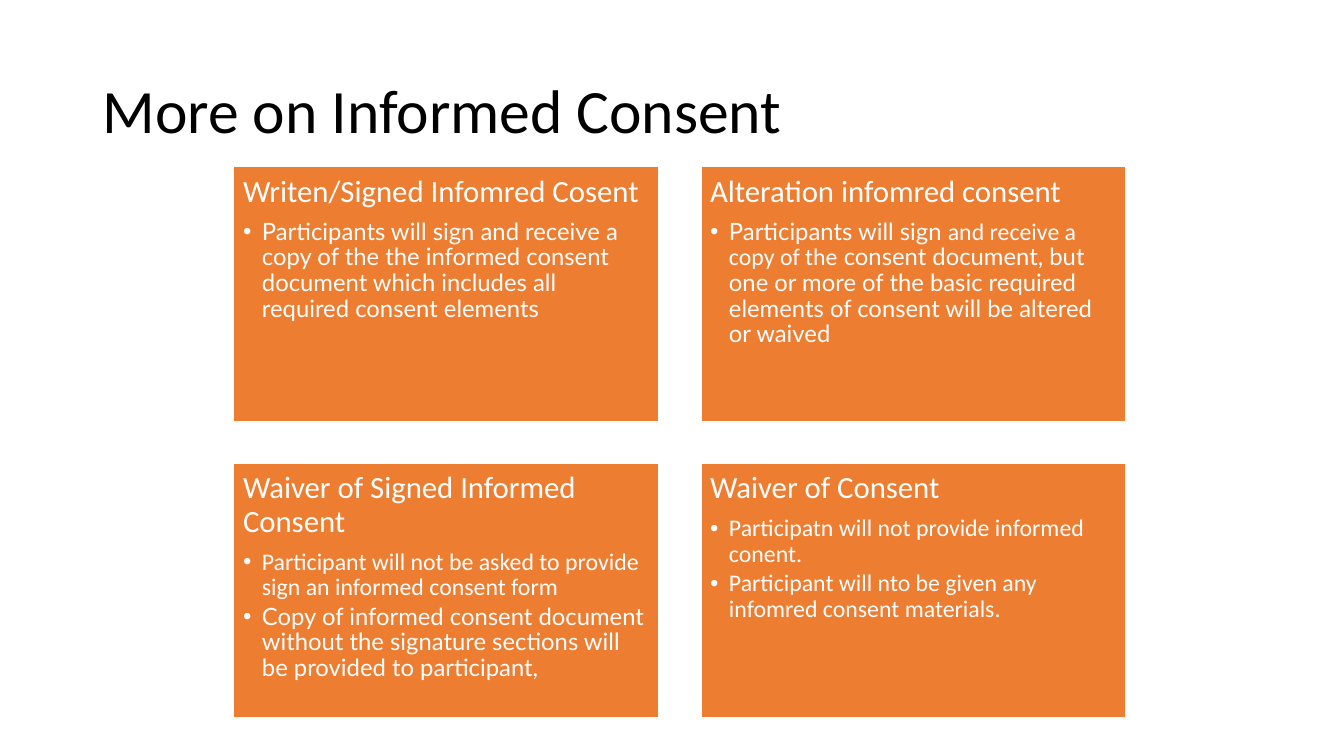
from dataclasses import dataclass

from lxml import etree
from pptx import Presentation
from pptx.dml.color import RGBColor
from pptx.enum.text import MSO_ANCHOR, MSO_AUTO_SIZE, PP_ALIGN
from pptx.oxml.ns import qn
from pptx.util import Pt

LEFT = PP_ALIGN.LEFT
TOP, MIDDLE = MSO_ANCHOR.TOP, MSO_ANCHOR.MIDDLE
NO_FIT = MSO_AUTO_SIZE.NONE
COMPARISON_LAYOUT = 4  # a title and four body placeholders


@dataclass(frozen=True)
class Theme:
    ink: RGBColor = RGBColor(0x00, 0x00, 0x00)
    paper: RGBColor = RGBColor(0xFF, 0xFF, 0xFF)
    card: RGBColor = RGBColor(0xED, 0x7D, 0x31)
    main_font: str = "Calibri"
    alt_font: str = "Lato"
    title_size: float = 44
    heading_size: float = 22
    bullet_size: float = 17
    line_spacing: float = 0.9


@dataclass(frozen=True)
class Run:
    text: str
    font: str


@dataclass(frozen=True)
class Card:
    heading: str
    bullets: list[list[Run]]


THEME = Theme()
MAIN, ALT = THEME.main_font, THEME.alt_font

# Card grid, in points
GRID_LEFT, GRID_TOP = 167, 118.8
CARD_WIDTH, CARD_HEIGHT, CARD_GAP = 303.8, 182.2, 29.8
COLUMNS = 2
CARD_INSET = 6.6
BULLET_INDENT = 13.5

CARDS = [
    Card("Writen/Signed Infomred Cosent", [
        [Run("Participants will sign and receive a copy of the the informed consent "
             "document which includes all required consent elements", ALT)],
    ]),
    Card("Alteration infomred consent", [
        [Run("Participants will sign ", ALT),
         Run("and receive a copy of the", MAIN),
         Run(" consent document, but one or more of the basic required elements "
             "of consent will be altered or waived", ALT)],
    ]),
    Card("Waiver of Signed Informed Consent", [
        [Run("Participant will not be asked to provide sign an informed consent form", MAIN)],
        [Run("Copy of informed consent document without the signature sections "
             "will be provided to participant,", ALT)],
    ]),
    Card("Waiver of Consent", [
        [Run("Participatn will not provide informed conent.", MAIN)],
        [Run("Participant will nto be given any infomred consent materials.", MAIN)],
    ]),
]


def place(holder, left: float, top: float, width: float, height: float) -> None:
    holder.left, holder.top = Pt(left), Pt(top)
    holder.width, holder.height = Pt(width), Pt(height)


def write(paragraph, runs: list[Run], *, size: float, color: RGBColor,
          space_after: float = 0, bullet: bool = False) -> None:
    paragraph.alignment = LEFT
    paragraph.line_spacing = THEME.line_spacing
    paragraph.space_before = Pt(0)
    paragraph.space_after = Pt(space_after)
    paragraph.level = 1 if bullet else 0
    # Indent and bullet sign
    properties = paragraph._p.get_or_add_pPr()
    indent = Pt(BULLET_INDENT) if bullet else 0
    properties.set("marL", str(indent))
    properties.set("indent", str(-indent))
    if bullet:
        etree.SubElement(properties, qn("a:buFont")).set("typeface", "Arial")
        etree.SubElement(properties, qn("a:buChar")).set("char", "•")
    else:
        etree.SubElement(properties, qn("a:buNone"))
    for part in runs:
        run = paragraph.add_run()
        run.text = part.text
        run.font.name = part.font
        run.font.size = Pt(size)
        run.font.bold = False
        run.font.color.rgb = color


def draw_card(holder, card: Card, index: int) -> None:
    row, column = divmod(index, COLUMNS)
    place(holder, GRID_LEFT + column * (CARD_WIDTH + CARD_GAP),
          GRID_TOP + row * (CARD_HEIGHT + CARD_GAP), CARD_WIDTH, CARD_HEIGHT)
    holder.fill.solid()
    holder.fill.fore_color.rgb = THEME.card
    holder.line.color.rgb = THEME.paper
    holder.line.width = Pt(1)

    frame = holder.text_frame
    frame.word_wrap = True
    frame.auto_size = NO_FIT
    frame.vertical_anchor = TOP
    frame.margin_left = frame.margin_right = Pt(CARD_INSET)
    frame.margin_top = frame.margin_bottom = Pt(CARD_INSET)
    write(frame.paragraphs[0], [Run(card.heading, MAIN)], size=THEME.heading_size,
          color=THEME.paper, space_after=0.35 * THEME.heading_size)
    for runs in card.bullets:
        write(frame.add_paragraph(), runs, size=THEME.bullet_size, color=THEME.paper,
              space_after=0.15 * THEME.bullet_size, bullet=True)


def main() -> None:
    deck = Presentation()
    deck.slide_width, deck.slide_height = Pt(960), Pt(540)
    slide = deck.slides.add_slide(deck.slide_layouts[COMPARISON_LAYOUT])

    # Title
    title = slide.shapes.title
    place(title, 66, 28.8, 828, 104.4)
    title.text_frame.auto_size = NO_FIT
    title.text_frame.vertical_anchor = MIDDLE
    write(title.text_frame.paragraphs[0], [Run("More on Informed Consent", MAIN)],
          size=THEME.title_size, color=THEME.ink)

    # Consent cards
    _, *card_holders = slide.placeholders
    for index, (holder, card) in enumerate(zip(card_holders, CARDS)):
        draw_card(holder, card, index)

    deck.save("out.pptx")


if __name__ == "__main__":
    main()
